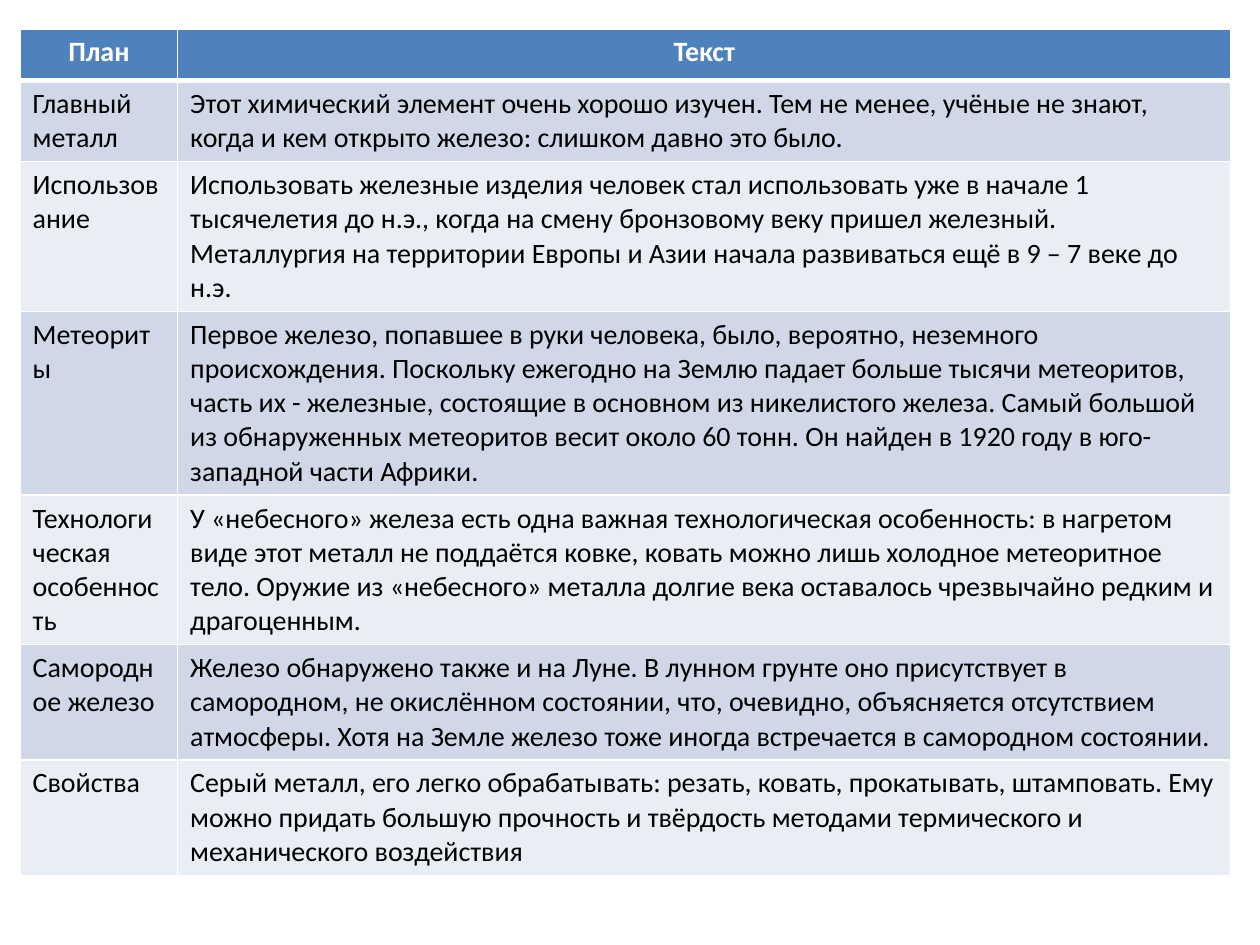
from lxml.etree import SubElement
from pptx import Presentation
from pptx.dml.color import RGBColor
from pptx.enum.text import PP_ALIGN as Align
from pptx.oxml.ns import qn
from pptx.util import Inches, Pt

WIDTH, HEIGHT = 10, 7.5
WHITE, BLACK, BLUE = "FFFFFF", "000000", "4F81BD"
BANDS = ("D0D8E8", "E9EDF4")

HEADINGS = ("План", "Текст")
TOPICS = [
    ("Главный металл",
     "Этот химический элемент очень хорошо изучен. Тем не менее, учёные не знают, "
     "когда и кем открыто железо: слишком давно это было."),
    ("Использование",
     "Использовать железные изделия человек стал использовать уже в начале 1 "
     "тысячелетия до н.э., когда на смену бронзовому веку пришел железный. "
     "Металлургия на территории Европы и Азии начала развиваться ещё в 9 – 7 веке "
     "до н.э."),
    ("Метеориты",
     "Первое железо, попавшее в руки человека, было, вероятно, неземного "
     "происхождения. Поскольку ежегодно на Землю падает больше тысячи метеоритов, "
     "часть их - железные, состоящие в основном из никелистого железа. Самый большой "
     "из обнаруженных метеоритов весит около 60 тонн. Он найден в 1920 году в "
     "юго-западной части Африки."),
    ("Технологическая особенность",
     "У «небесного» железа есть одна важная технологическая особенность: в нагретом "
     "виде этот металл не поддаётся ковке, ковать можно лишь холодное метеоритное "
     "тело. Оружие из «небесного» металла долгие века оставалось чрезвычайно редким "
     "и драгоценным."),
    ("Самородное железо",
     "Железо обнаружено также и на Луне. В лунном грунте оно присутствует в "
     "самородном, не окислённом состоянии, что, очевидно, объясняется отсутствием "
     "атмосферы. Хотя на Земле железо тоже иногда встречается в самородном состоянии."),
    ("Свойства",
     "Серый металл, его легко обрабатывать: резать, ковать, прокатывать, штамповать. "
     "Ему можно придать большую прочность и твёрдость методами термического и "
     "механического воздействия"),
]


def color(code):
    return RGBColor.from_string(code)


class Page:
    """Holds the text style and the current slide."""

    def __init__(self, slide, font="Calibri", size=16):
        self.slide, self.font, self.size = slide, font, size

    def table(self, headings, topics, left, top, widths, height, row_height):
        """Place a table; lengths are shares of the slide's size."""
        frame = self.slide.shapes.add_table(
            len(topics) + 1, len(headings),
            Inches(left * WIDTH), Inches(top * HEIGHT),
            Inches(sum(widths) * WIDTH), Inches(height * HEIGHT))
        plan = frame.table
        for column, share in zip(plan.columns, widths):
            column.width = Inches(share * WIDTH)
        for row in plan.rows:
            row.height = Inches(row_height * HEIGHT)
        frame.height = Inches(height * HEIGHT)

        for r, texts in enumerate([headings, *topics]):
            for c, text in enumerate(texts):
                self.cell(plan.cell(r, c), text, r)

    def cell(self, cell, text, row):
        """Fill one cell: row 0 is the heading, the others are banded."""
        heading = row == 0
        cell.text = text
        paragraph = cell.text_frame.paragraphs[0]
        paragraph.alignment = Align.CENTER if heading else Align.LEFT
        font = paragraph.font
        font.name, font.size, font.bold = self.font, Pt(self.size), heading
        font.color.rgb = color(WHITE if heading else BLACK)
        # Borders come before the fill in the cell's XML
        self.borders(cell, top=3 if row == 1 else 1, bottom=3 if heading else 1)
        cell.fill.solid()
        cell.fill.fore_color.rgb = color(BLUE if heading else BANDS[(row - 1) % 2])

    def borders(self, cell, top, bottom):
        """Draw white cell borders; widths are in points."""
        properties = cell._tc.get_or_add_tcPr()
        for side, width in (("L", 1), ("R", 1), ("T", top), ("B", bottom)):
            line = SubElement(properties, qn(f"a:ln{side}"), w=str(Pt(width)))
            SubElement(SubElement(line, qn("a:solidFill")), qn("a:srgbClr"), val=WHITE)


def main():
    deck = Presentation()
    deck.slide_width, deck.slide_height = Inches(WIDTH), Inches(HEIGHT)
    page = Page(deck.slides.add_slide(deck.slide_layouts[6]))

    # Reading plan about iron; rows grow with their text
    page.table(HEADINGS, TOPICS, left=0.016, top=0.23 / HEIGHT,
               widths=(0.125, 0.836), height=6.61 / HEIGHT,
               row_height=0.41 / HEIGHT)
    deck.save("out.pptx")


if __name__ == "__main__":
    main()
